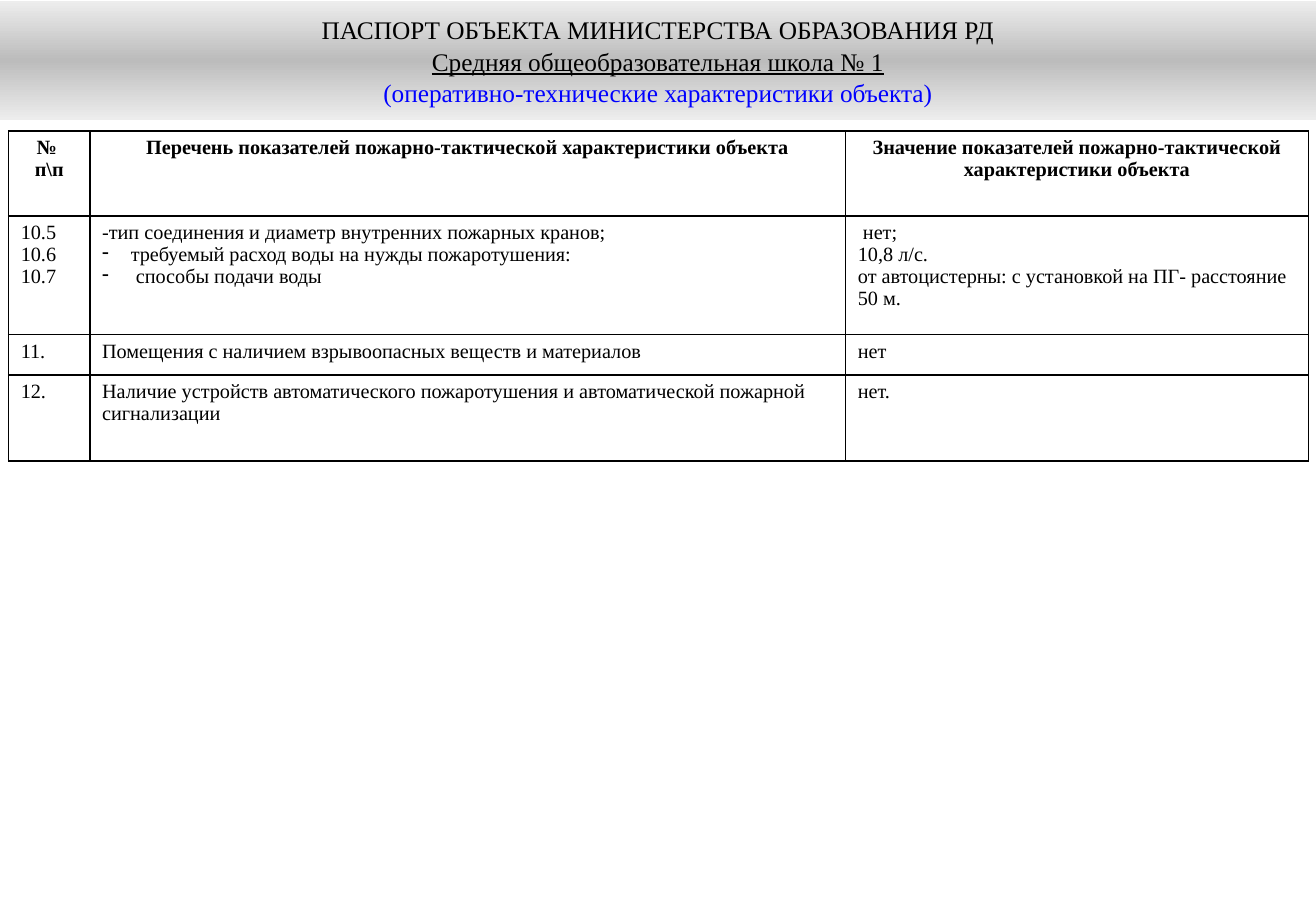
from lxml import etree
from pptx import Presentation
from pptx import util as u
from pptx.dml import color
from pptx.enum import text
from pptx.oxml import ns

FONT = "Times New Roman"
BLACK, WHITE, BLUE = "000000", "FFFFFF", "0000FF"
COL_WIDTHS = [1.7, 15.8, 9.67]
ROW_HEIGHTS = [1.78, 2.48, 0.84, 1.8]

# Each cell is a list of paragraphs; a tuple is (bullet, text)
ROWS = [
    [["№ ", "п\\п"],
     ["Перечень показателей пожарно-тактической характеристики объекта"],
     ["Значение показателей пожарно-тактической характеристики объекта"]],
    [["10.5", "10.6", "10.7"],
     ["-тип соединения и диаметр внутренних пожарных кранов;",
      ("-", "требуемый расход воды на нужды пожаротушения:"),
      ("-", " способы подачи воды")],
     [" нет;", "10,8 л/с.",
      "от автоцистерны: с установкой на ПГ- расстояние 50 м."]],
    [["11."],
     ["Помещения с наличием взрывоопасных веществ и материалов"],
     ["нет"]],
    [["12."],
     ["Наличие устройств автоматического пожаротушения и автоматической "
      "пожарной сигнализации"],
     ["нет."]],
]


def rgb(value):
    return color.RGBColor.from_string(value)


def sub(parent, tag, **attrs):
    return etree.SubElement(parent, ns.qn(tag), attrs)


def add_run(p, content, size, hex_color=BLACK, bold=False, underline=False):
    r = p.add_run()
    r.text = content
    r.font.name, r.font.size = FONT, u.Pt(size)
    r.font.bold, r.font.underline = bold, underline
    r.font.color.rgb = rgb(hex_color)


def paragraph(tf, index):
    return tf.paragraphs[0] if index == 0 else tf.add_paragraph()


def set_bullet(p, char):
    pPr = p._p.get_or_add_pPr()
    indent = u.Cm(0.6)
    pPr.set("marL", str(indent))
    pPr.set("indent", str(-indent))
    sub(pPr, "a:buChar", char=char)


def fill_gradient(sp, stops, angle):
    sp.fill.gradient()
    sp.fill.gradient_angle = angle
    gs_list = sp._element.spPr.find(ns.qn("a:gradFill")).find(ns.qn("a:gsLst"))
    for gs in list(gs_list):
        gs_list.remove(gs)
    for percent, value in stops:
        gs = sub(gs_list, "a:gs", pos=str(percent * 1000))
        sub(gs, "a:srgbClr", val=value)


def set_borders(cell, width=1):
    tcPr = cell._tc.get_or_add_tcPr()
    for side in ("a:lnL", "a:lnR", "a:lnT", "a:lnB"):
        ln = sub(tcPr, side, w=str(u.Pt(width)))
        sub(sub(ln, "a:solidFill"), "a:srgbClr", val=BLACK)


def add_heading(s):
    sp = s.shapes.title
    sp.left, sp.top = u.Cm(0), u.Cm(0.02)
    sp.width, sp.height = u.Cm(27.51), u.Cm(2.48)
    fill_gradient(sp, [(0, "EDEDED"), (50, "BCBCBC"), (100, "EDEDED")], 90)
    tf = sp.text_frame
    tf.auto_size = text.MSO_AUTO_SIZE.NONE
    tf.word_wrap = True
    tf.vertical_anchor = text.MSO_ANCHOR.MIDDLE
    lines = [
        ("ПАСПОРТ ОБЪЕКТА МИНИСТЕРСТВА ОБРАЗОВАНИЯ РД", BLACK, False),
        ("Средняя общеобразовательная школа № 1", BLACK, True),
        ("(оперативно-технические характеристики объекта)", BLUE, False),
    ]
    for i, (content, hex_color, underline) in enumerate(lines):
        p = paragraph(tf, i)
        p.alignment = text.PP_ALIGN.CENTER
        p.line_spacing = 1.05
        add_run(p, content, 15, hex_color, underline=underline)


def fill_cell(cell, items, header):
    set_borders(cell)
    cell.fill.solid()
    cell.fill.fore_color.rgb = rgb(WHITE)
    for i, item in enumerate(items):
        bullet, content = item if isinstance(item, tuple) else (None, item)
        p = paragraph(cell.text_frame, i)
        p.alignment = text.PP_ALIGN.CENTER if header else text.PP_ALIGN.LEFT
        p.line_spacing = 0.97
        if bullet:
            set_bullet(p, bullet)
        add_run(p, content, 12, bold=header)


def add_indicator_table(s):
    frame = s.shapes.add_table(len(ROWS), len(COL_WIDTHS), u.Cm(0.18), u.Cm(2.74),
                               u.Cm(sum(COL_WIDTHS)), u.Cm(sum(ROW_HEIGHTS)))
    table = frame.table
    table.horz_banding = False
    for column, width in zip(table.columns, COL_WIDTHS):
        column.width = u.Cm(width)
    for i, (row, height) in enumerate(zip(table.rows, ROW_HEIGHTS)):
        row.height = u.Cm(height)
        for cell, items in zip(row.cells, ROWS[i]):
            fill_cell(cell, items, header=i == 0)


def main():
    prs = Presentation()
    prs.slide_width, prs.slide_height = u.Cm(27.51), u.Cm(19.05)
    s = prs.slides.add_slide(prs.slide_layouts[5])
    # Heading band
    add_heading(s)
    # Fire safety indicators
    add_indicator_table(s)
    prs.save("out.pptx")


if __name__ == "__main__":
    main()
